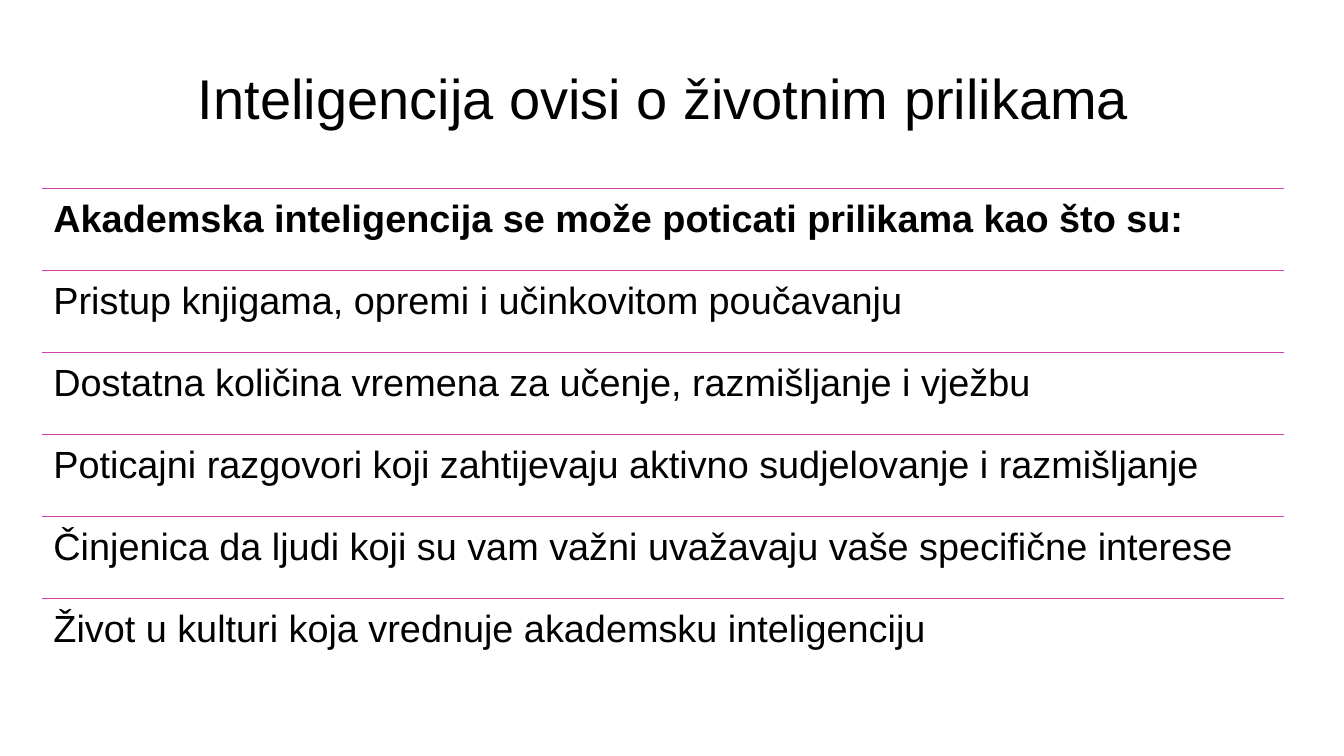
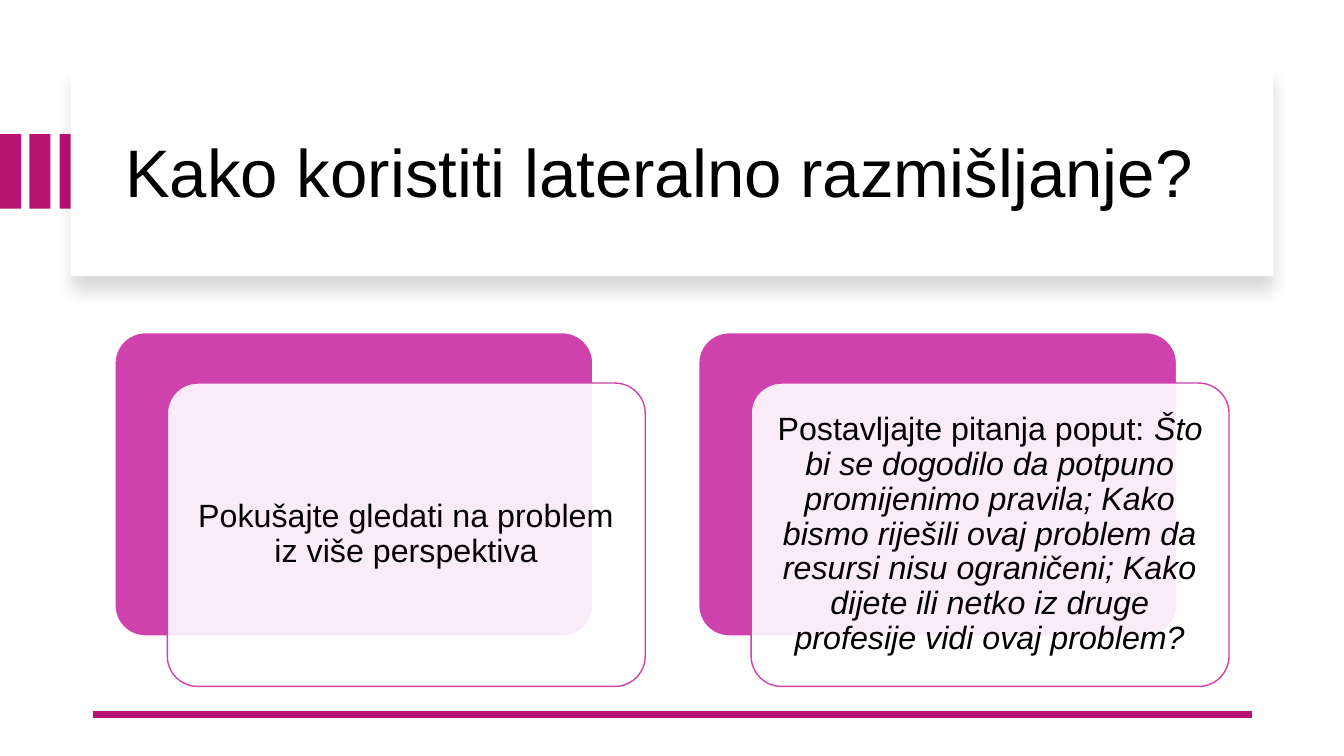
from lxml.etree import SubElement
from pptx import Presentation
from pptx.dml.color import RGBColor
from pptx.enum.shapes import MSO_CONNECTOR, MSO_SHAPE
from pptx.enum.text import MSO_ANCHOR, MSO_AUTO_SIZE, PP_ALIGN
from pptx.oxml.ns import qn
from pptx.util import Pt

# Content
OPPORTUNITIES_TITLE = "Inteligencija ovisi o životnim prilikama"
OPPORTUNITIES = [
    "Akademska inteligencija se može poticati prilikama kao što su:",
    "Pristup knjigama, opremi i učinkovitom poučavanju",
    "Dostatna količina vremena za učenje, razmišljanje i vježbu",
    "Poticajni razgovori koji zahtijevaju aktivno sudjelovanje i razmišljanje",
    "Činjenica da ljudi koji su vam važni uvažavaju vaše specifične interese",
    "Život u kulturi koja vrednuje akademsku inteligenciju",
]
LATERAL_TITLE = "Kako koristiti lateralno razmišljanje?"
# Each card: list of (text, italic)
CARDS = [
    [("Pokušajte gledati na problem iz više perspektiva", False)],
    [("Postavljajte pitanja poput: ", False),
     ("Što bi se dogodilo da potpuno promijenimo pravila; Kako bismo riješili "
      "ovaj problem da resursi nisu ograničeni; Kako dijete ili netko iz druge "
      "profesije vidi ovaj problem?", True)],
]

# Shared style: 100 px to the inch
PX = 9144
FONT = "Arial"
BLACK, WHITE = "000000", "FFFFFF"
PINK, MAGENTA = "CF41AD", "B71373"


def px(*lengths):
    return [round(length * PX) for length in lengths]


def color(hex_code):
    return RGBColor.from_string(hex_code)


def style_paragraph(paragraph, size, align=PP_ALIGN.LEFT, bold=False):
    paragraph.alignment = align
    paragraph.line_spacing = 0.9
    font = paragraph.font
    font.name, font.size, font.bold = FONT, Pt(size), bold
    font.color.rgb = color(BLACK)


def set_insets(frame, inset):
    frame.margin_left = frame.margin_right = px(inset)[0]
    frame.margin_top = frame.margin_bottom = px(inset)[0]
    frame.word_wrap = True


def add_titled_slide(presentation, text, box, size, align):
    slide = presentation.slides.add_slide(presentation.slide_layouts[5])
    title = slide.shapes.title
    title.left, title.top, title.width, title.height = px(*box)
    frame = title.text_frame
    frame.text = text
    frame.auto_size = MSO_AUTO_SIZE.NONE
    frame.vertical_anchor = MSO_ANCHOR.MIDDLE
    style_paragraph(frame.paragraphs[0], size, align)
    return slide


def add_rule(slide, left, right, top, hex_code, width):
    line = slide.shapes.add_connector(
        MSO_CONNECTOR.STRAIGHT, *px(left, top, right, top))
    line.line.color.rgb = color(hex_code)
    line.line.width = Pt(width)
    SubElement(line._element.spPr, qn("a:effectLst"))


def add_block(slide, kind, box, fill, outline=None):
    shape = slide.shapes.add_shape(kind, *px(*box))
    shape.shadow.inherit = False
    shape.fill.solid()
    shape.fill.fore_color.rgb = color(fill)
    if outline:
        shape.line.color.rgb = color(outline)
        shape.line.width = Pt(1)
    else:
        shape.line.fill.background()
    return shape


def add_alpha(color_element, percent):
    SubElement(color_element, qn("a:alpha"), val=str(percent * 1000))


def add_soft_shadow(shape):
    effects = shape._element.spPr.find(qn("a:effectLst"))
    shadow = SubElement(effects, qn("a:outerShdw"), blurRad=str(Pt(11)),
                        dist=str(Pt(10)), dir="5400000", algn="t", rotWithShape="0")
    add_alpha(SubElement(shadow, qn("a:srgbClr"), val=BLACK), 15)


def build_opportunities(presentation):
    left, top, width, pitch = 42, 187, 1231, 81.4
    slide = add_titled_slide(presentation, OPPORTUNITIES_TITLE,
                             (left, 40, width, 122), 40, PP_ALIGN.CENTER)
    for index, text in enumerate(OPPORTUNITIES):
        row_top = top + index * pitch
        add_rule(slide, left, left + width, row_top, PINK, 0.5)
        frame = slide.shapes.add_textbox(*px(left, row_top, width, pitch)).text_frame
        set_insets(frame, 11)
        frame.text = text
        style_paragraph(frame.paragraphs[0], 27, bold=index == 0)


def add_card(slide, left, runs):
    top, width, height, shift = 330, 474, 301, (52, 50)
    back = add_block(slide, MSO_SHAPE.ROUNDED_RECTANGLE,
                     (left, top, width, height), PINK, WHITE)
    front = add_block(slide, MSO_SHAPE.ROUNDED_RECTANGLE,
                      (left + shift[0], top + shift[1], width, height), WHITE, PINK)
    for shape in (back, front):
        shape.adjustments[0] = 0.1
    add_alpha(front._element.spPr.find(qn("a:solidFill"))[0], 90)

    frame = front.text_frame
    set_insets(frame, 10)
    frame.vertical_anchor = MSO_ANCHOR.MIDDLE
    paragraph = frame.paragraphs[0]
    style_paragraph(paragraph, 23, PP_ALIGN.CENTER)
    for text, italic in runs:
        run = paragraph.add_run()
        run.text = text
        run.font.italic = italic
        run.font.color.rgb = color(BLACK)


def build_lateral_thinking(presentation):
    slide = add_titled_slide(presentation, LATERAL_TITLE,
                             (114, 89, 1113, 170), 48, PP_ALIGN.LEFT)
    # Stripes running behind the title panel
    for left in (0, 29, 59):
        add_block(slide, MSO_SHAPE.RECTANGLE, (left, 133, 21, 74), MAGENTA)
    panel = add_block(slide, MSO_SHAPE.RECTANGLE, (70, 67, 1193, 207), WHITE)
    add_soft_shadow(panel)
    # Bring the title in front of its panel
    panel._element.addnext(slide.shapes.title._element)

    add_rule(slide, 92, 1242, 709, MAGENTA, 4.5)
    for index, runs in enumerate(CARDS):
        add_card(slide, 114 + index * 579, runs)


def main():
    presentation = Presentation()
    presentation.slide_width, presentation.slide_height = px(1333, 750)
    build_opportunities(presentation)
    build_lateral_thinking(presentation)
    presentation.save("out.pptx")


if __name__ == "__main__":
    main()
